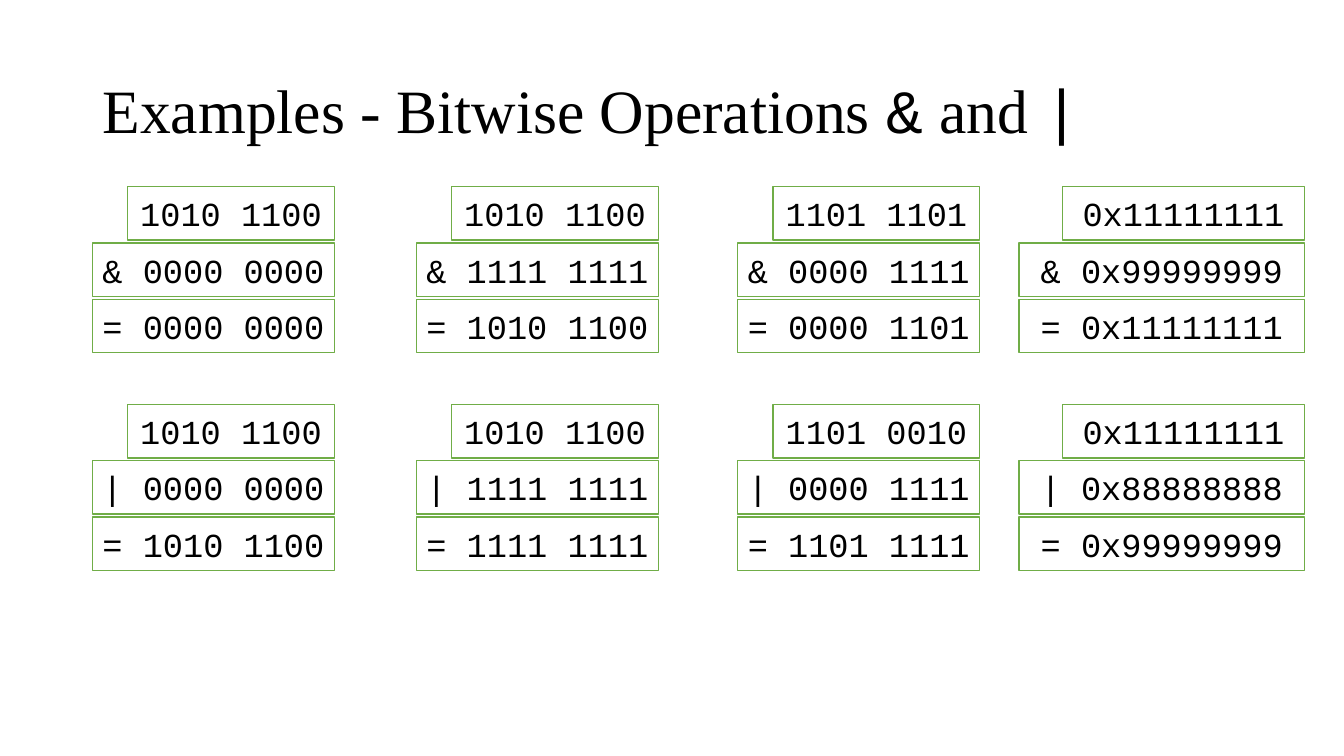
from dataclasses import dataclass

from pptx import Presentation
from pptx.dml.color import RGBColor
from pptx.enum import shapes, text
from pptx.util import Pt

TITLE = [("Examples - Bitwise Operations ", "serif"), ("&", "mono"),
         (" and ", "serif"), ("|", "mono")]

EXAMPLES = [
    [("1010 1100", "& 0000 0000", "= 0000 0000"),
     ("1010 1100", "& 1111 1111", "= 1010 1100"),
     ("1101 1101", "& 0000 1111", "= 0000 1101"),
     ("0x11111111", "& 0x99999999", "= 0x11111111")],
    [("1010 1100", "| 0000 0000", "= 1010 1100"),
     ("1010 1100", "| 1111 1111", "= 1111 1111"),
     ("1101 0010", "| 0000 1111", "= 1101 1111"),
     ("0x11111111", "| 0x88888888", "= 0x99999999")],
]


@dataclass(frozen=True)
class Theme:
    ink: RGBColor = RGBColor(0, 0, 0)
    paper: RGBColor = RGBColor(255, 255, 255)
    border: RGBColor = RGBColor(0x70, 0xAD, 0x47)
    serif: str = "Times New Roman"
    mono: str = "Courier New"
    title_size: int = 44
    number_size: int = 24


THEME = Theme()

BINARY_WIDTHS = (147.6, 172.8)
HEX_WIDTHS = (172.8, 203.8)
COLUMN_RIGHTS = (238.8, 470.2, 699.8, 931.7)
GROUP_TOPS = (133.4, 288.9)
ROW_PITCH = 40.2
BOX_HEIGHT = 38.2


def add_title(page):
    title = page.shapes.title
    title.left, title.top, title.width, title.height = map(Pt, (66, 28.8, 828, 104.4))
    frame = title.text_frame
    frame.vertical_anchor = text.MSO_ANCHOR.MIDDLE
    frame.word_wrap = True
    para = frame.paragraphs[0]
    para.alignment = text.PP_ALIGN.LEFT
    para.line_spacing = 0.9
    para.font.size = Pt(THEME.title_size)
    para.font.color.rgb = THEME.ink
    for words, face in TITLE:
        span = para.add_run()
        span.text = words
        span.font.name = getattr(THEME, face)


def add_number(page, words, right, top, width):
    box = page.shapes.add_shape(shapes.MSO_SHAPE.RECTANGLE, Pt(right - width),
                                Pt(top), Pt(width), Pt(BOX_HEIGHT))
    box.shadow.inherit = False
    box.fill.solid()
    box.fill.fore_color.rgb = THEME.paper
    box.line.color.rgb = THEME.border
    box.line.width = Pt(1)
    frame = box.text_frame
    frame.word_wrap = False
    frame.vertical_anchor = text.MSO_ANCHOR.MIDDLE
    para = frame.paragraphs[0]
    para.text = words
    para.alignment = text.PP_ALIGN.CENTER
    para.font.name = THEME.mono
    para.font.size = Pt(THEME.number_size)
    para.font.color.rgb = THEME.ink


def main():
    deck = Presentation()
    deck.slide_width, deck.slide_height = Pt(960), Pt(540)
    page = deck.slides.add_slide(deck.slide_layouts[5])
    add_title(page)
    for group, group_top in zip(EXAMPLES, GROUP_TOPS):
        for example, right in zip(group, COLUMN_RIGHTS):
            is_hex = example[0].startswith("0x")
            short, long = HEX_WIDTHS if is_hex else BINARY_WIDTHS
            for row, words in enumerate(example):
                width = long if row else short
                add_number(page, words, right, group_top + row * ROW_PITCH, width)
    deck.save("out.pptx")


if __name__ == "__main__":
    main()
